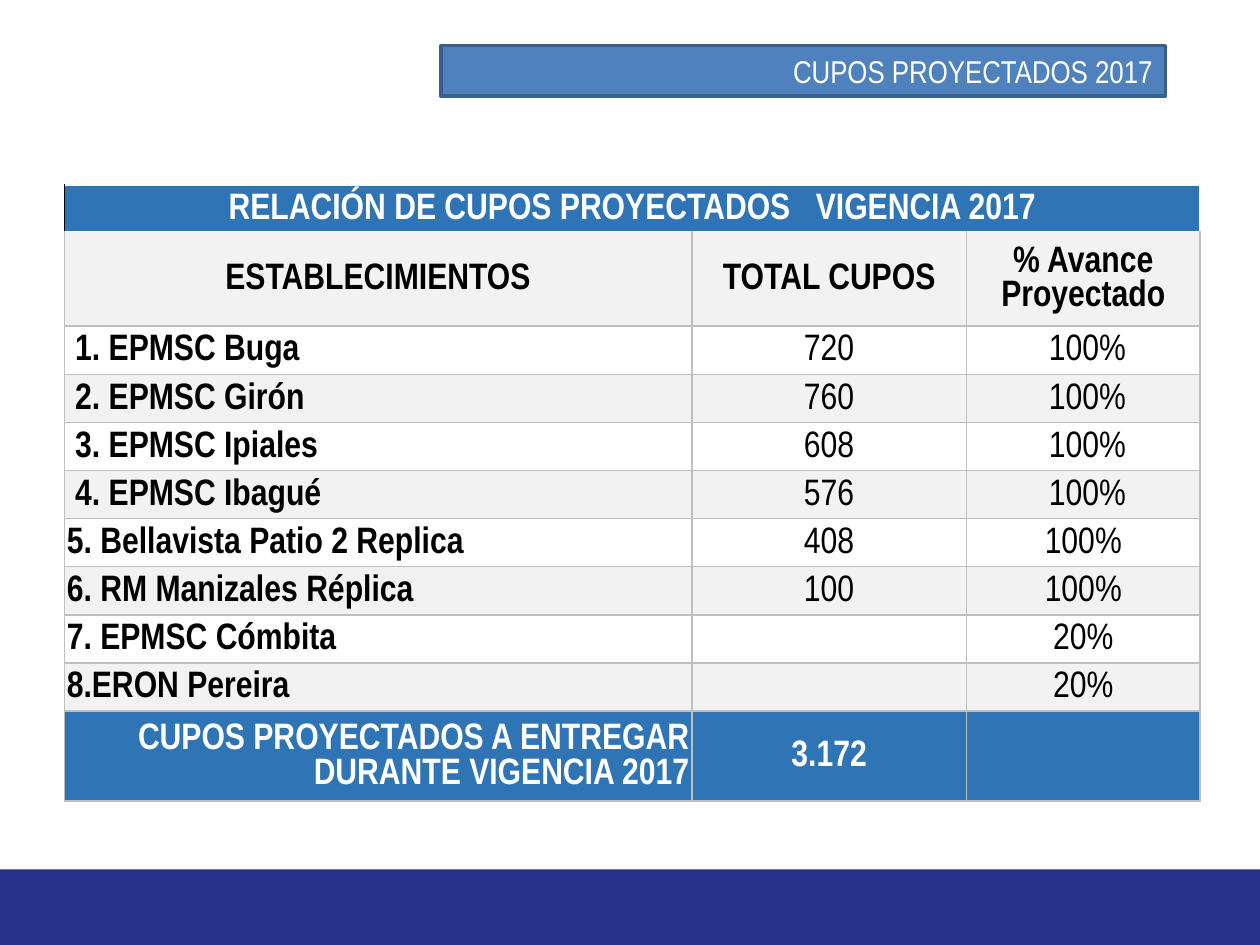
from pptx import Presentation
from pptx.dml.color import RGBColor as RGB
from pptx.enum.shapes import MSO_SHAPE as Shape
from pptx.enum.text import MSO_ANCHOR as Anchor, MSO_AUTO_SIZE as Auto, PP_ALIGN as Align
from pptx.oxml import parse_xml
from pptx.oxml.ns import nsdecls
from pptx.util import Pt

FONT = "Arial Narrow"
WHITE = RGB(0xFF, 0xFF, 0xFF)
BLACK = RGB(0, 0, 0)
GREY = RGB(0xBF, 0xBF, 0xBF)
PALE = RGB(0xF2, 0xF2, 0xF2)
BLUE = RGB(0x2F, 0x75, 0xB5)
STEEL = RGB(0x4F, 0x81, 0xBD)
EDGE = RGB(0x3A, 0x5F, 0x8C)
NAVY = RGB(0x28, 0x32, 0x8A)

COLS = [358.5, 157, 133.5]
HEADS = ["ESTABLECIMIENTOS", "TOTAL CUPOS", "% Avance Proyectado"]
SITES = [
    (" 1. EPMSC Buga", "720", " 100%"),
    (" 2. EPMSC Girón", "760", " 100%"),
    (" 3. EPMSC Ipiales", "608", " 100%"),
    (" 4. EPMSC Ibagué", "576", " 100%"),
    ("5. Bellavista Patio 2 Replica", "408", "100%"),
    ("6. RM Manizales Réplica", "100", "100%"),
    ("7. EPMSC Cómbita", "", "20%"),
    ("8.ERON Pereira", "", "20%"),
]
TOTAL = ["CUPOS PROYECTADOS A ENTREGAR DURANTE VIGENCIA 2017", "3.172", ""]
ROWS = [26.6, 54] + [27.5] * len(SITES) + [51.5]


def add_run(para, text, size, color, bold=False):
    run = para.add_run()
    run.text = text
    font = run.font
    font.name, font.size, font.bold = FONT, Pt(size), bold
    font.color.rgb = color
    return run


def add_edges(cell, sides, color, width):
    """Draw cell borders; sides is a string of L, R, T and B, in that order."""
    props = cell._tc.get_or_add_tcPr()
    for spot, side in enumerate(sides):
        props.insert(spot, parse_xml(
            f'<a:ln{side} {nsdecls("a")} w="{Pt(width)}"><a:solidFill>'
            f'<a:srgbClr val="{color}"/></a:solidFill></a:ln{side}>'))


def fill_cell(cell, text, fill, color=BLACK, bold=False, align=Align.CENTER):
    cell.fill.solid()
    cell.fill.fore_color.rgb = fill
    cell.vertical_anchor = Anchor.MIDDLE
    cell.margin_left = cell.margin_right = cell.margin_top = Pt(1.4)
    cell.margin_bottom = 0
    para = cell.text_frame.paragraphs[0]
    para.alignment = align
    if text:
        add_run(para, text, 21, color, bold)
    return para


def add_title(slide, x, y, w, h):
    title = slide.shapes.title
    title.left, title.top, title.width, title.height = Pt(x), Pt(y), Pt(w), Pt(h)
    title.fill.solid()
    title.fill.fore_color.rgb = STEEL
    title.line.color.rgb = EDGE
    title.line.width = Pt(2)
    frame = title.text_frame
    frame.auto_size = Auto.NONE
    frame.word_wrap = True
    frame.vertical_anchor = Anchor.MIDDLE
    para = frame.paragraphs[0]
    para.alignment = Align.RIGHT
    add_run(para, "CUPOS PROYECTADOS 2017", 18, WHITE)


def add_quotas(slide, x, y):
    table = slide.shapes.add_table(
        len(ROWS), len(COLS), Pt(x), Pt(y), Pt(sum(COLS)), Pt(sum(ROWS))).table
    table.first_row = table.horz_banding = False
    for col, width in zip(table.columns, COLS):
        col.width = Pt(width)
    for row, height in zip(table.rows, ROWS):
        row.height = Pt(height)

    banner = table.cell(0, 0)
    banner.merge(table.cell(0, len(COLS) - 1))
    para = fill_cell(banner, "RELACIÓN DE CUPOS PROYECTADOS", BLUE, WHITE, True)
    gap = add_run(para, " ", 21, WHITE, True)
    gap.font._element.set("spc", "960")  # widens the space before the year
    add_run(para, "VIGENCIA 2017", 21, WHITE, True)
    add_edges(banner, "L", BLACK, 0.5)

    for c, text in enumerate(HEADS):
        cell = table.cell(1, c)
        fill_cell(cell, text, PALE, bold=True)
        add_edges(cell, "LRB", GREY, 1)
    for r, site in enumerate(SITES):
        for c, text in enumerate(site):
            cell = table.cell(r + 2, c)
            fill_cell(cell, text, PALE if r % 2 else WHITE, bold=c == 0,
                      align=Align.CENTER if c else Align.LEFT)
            add_edges(cell, "LRTB", GREY, 1)
    for c, text in enumerate(TOTAL):
        cell = table.cell(len(ROWS) - 1, c)
        fill_cell(cell, text, BLUE, WHITE, True,
                  Align.CENTER if c else Align.RIGHT)
        add_edges(cell, "LRTB", GREY, 1)


def add_footer(slide, x, y, w, h):
    bar = slide.shapes.add_shape(Shape.RECTANGLE, Pt(x), Pt(y), Pt(w), Pt(h))
    bar.shadow.inherit = False
    bar.fill.solid()
    bar.fill.fore_color.rgb = NAVY
    bar.line.fill.background()


def main():
    deck = Presentation()
    deck.slide_width, deck.slide_height = Pt(720), Pt(540)
    slide = deck.slides.add_slide(deck.slide_layouts[5])
    add_footer(slide, 0, 496.8, 720, 43.2)
    add_title(slide, 252, 26, 414, 29)
    add_quotas(slide, 36.8, 105.8)
    deck.save("out.pptx")


if __name__ == "__main__":
    main()
